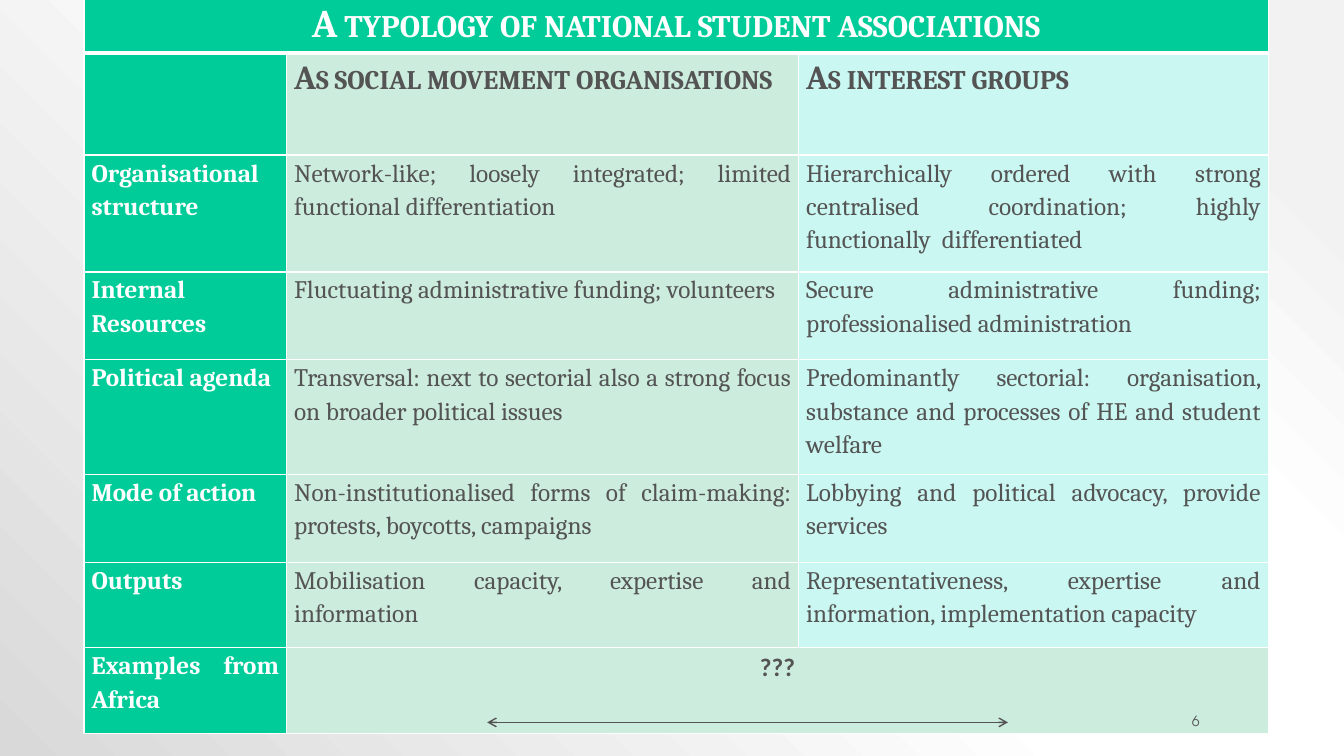
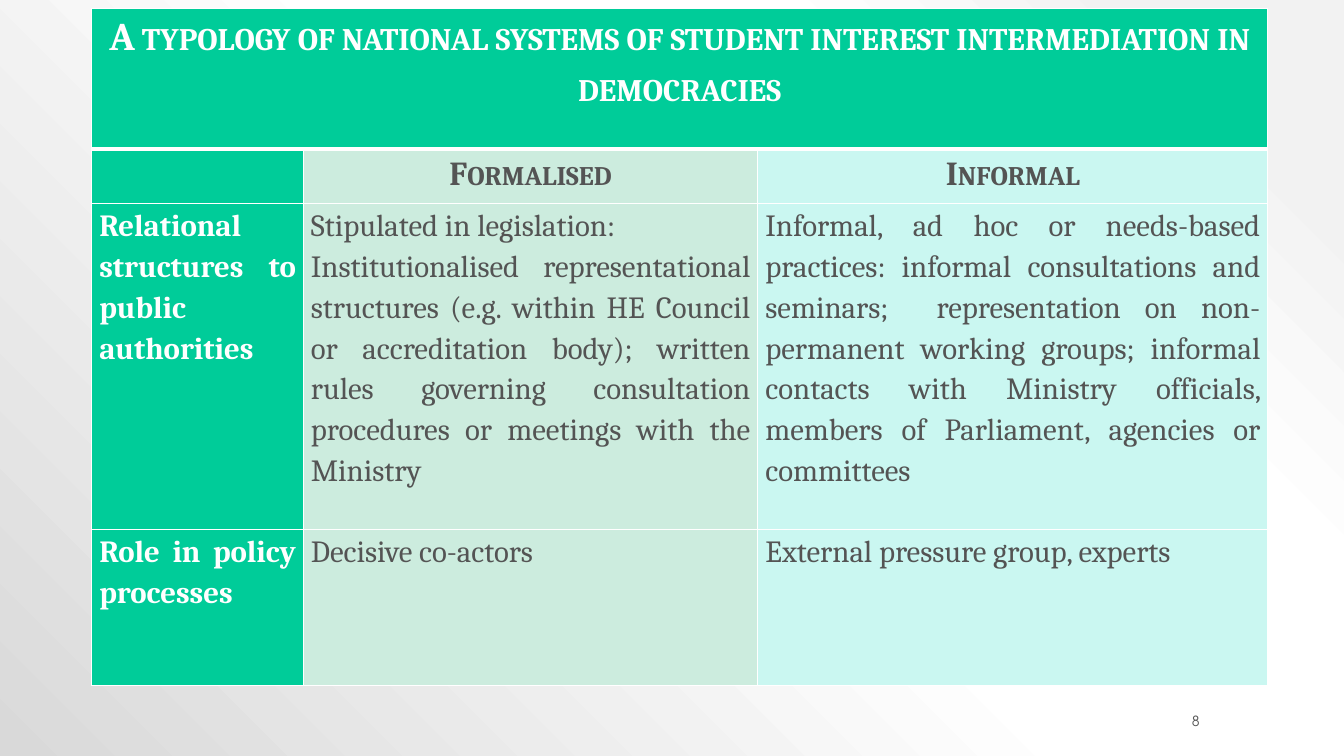
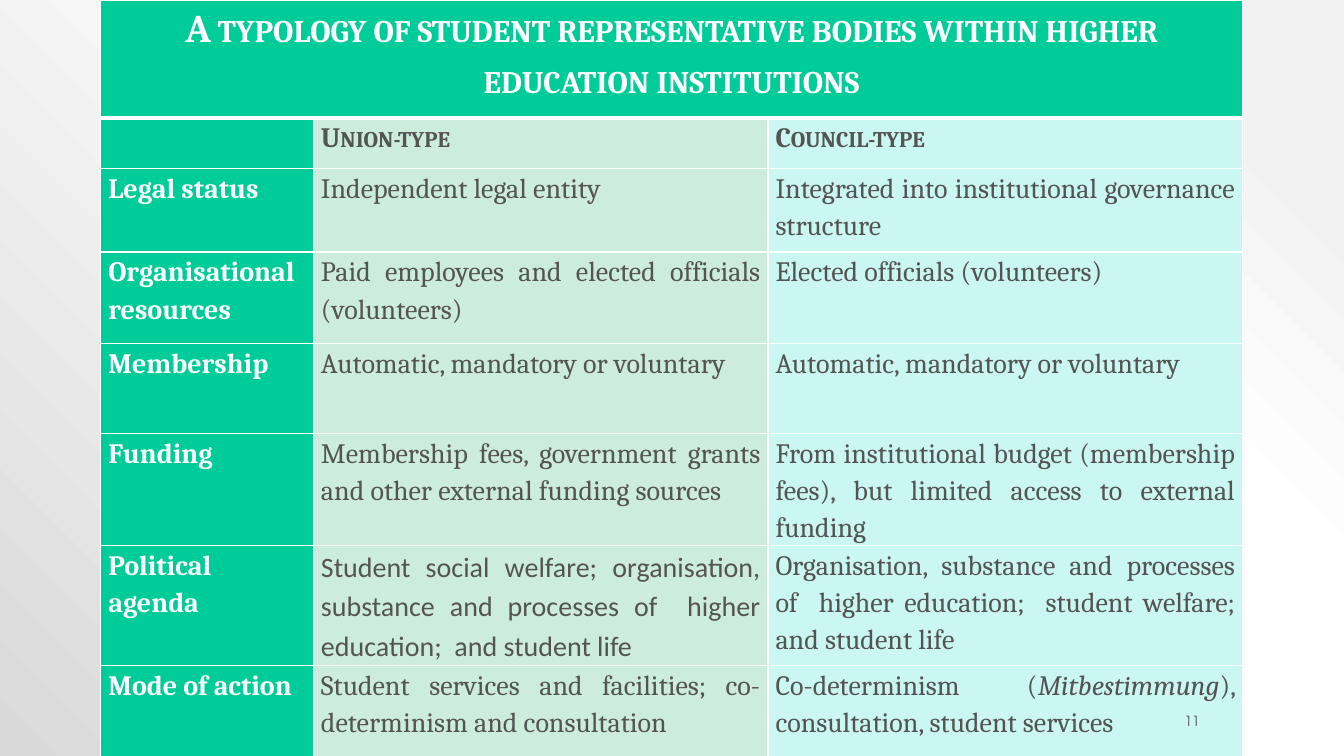
from pptx import Presentation
from pptx import util as u
from pptx.dml.color import RGBColor
from pptx.enum import shapes, text
from pptx.oxml import parse_xml
from pptx.oxml.ns import nsdecls, qn

Pt = u.Pt
COLOURS = {"green": "00CC99", "mint": "CCECDE", "aqua": "CAF7F1",
           "white": "FFFFFF", "grey": "545454"}
COLUMN_FILLS = ("green", "mint", "aqua")
BACKGROUND_STOPS = ((10, "F2F2F2"), (28, "FFFFFF"), (48, "FFFFFF"), (100, "D9D9D9"))
TITLE_SIZE = 28
CENTRE, JUSTIFY = text.PP_ALIGN.CENTER, text.PP_ALIGN.JUSTIFY

# Asterisks in a cell enclose italic words; "centred" and "calibri" hold (row, column).
TYPOLOGIES = [
    {
        "number": "6", "left": 60, "top": -2.9,
        "widths": (144.7, 365.8, 335.5),
        "heights": (41, 72.7, 83.5, 62.6, 82.1, 62.6, 61.2, 61),
        "heading_size": 24, "body_size": 18,
        "centred": {(7, 1)}, "calibri": {(7, 1)}, "bold": {(7, 1)},
        "wide_rows": [7], "arrow": (348, 516, 720, 516),
        "rows": [
            ("A typology of national student associations",),
            ("", "As social movement organisations", "As interest groups"),
            ("Organisational structure",
             "Network-like; loosely integrated; limited functional differentiation",
             "Hierarchically ordered with strong centralised coordination; "
             "highly functionally  differentiated"),
            ("Internal Resources",
             "Fluctuating administrative funding; volunteers",
             "Secure administrative funding; professionalised administration"),
            ("Political agenda",
             "Transversal: next to sectorial also a strong focus on broader political issues",
             "Predominantly sectorial: organisation, substance and processes of HE "
             "and student welfare"),
            ("Mode of action",
             "Non-institutionalised forms of claim-making: protests, boycotts, campaigns",
             "Lobbying and political advocacy, provide services"),
            ("Outputs",
             "Mobilisation capacity, expertise and information",
             "Representativeness, expertise and information, implementation capacity"),
            ("Examples from Africa", "???"),
        ],
    },
    {
        "number": "8", "left": 65.5, "top": 5.8,
        "widths": (151.2, 324.7, 364.3),
        "heights": (100.8, 38.9, 232.5, 111.6),
        "heading_size": 24, "body_size": 22,
        "centred": {(1, 1), (1, 2)},
        "rows": [
            ("A typology of national systems of student interest intermediation "
             "in democracies",),
            ("", "Formalised", "Informal"),
            ("Relational structures to public authorities",
             "Stipulated in legislation:\n"
             "Institutionalised representational structures (e.g. within HE Council or "
             "accreditation body); written rules governing consultation procedures or "
             "meetings with the Ministry",
             "Informal, ad hoc or needs-based practices: informal consultations and "
             "seminars;  representation on non-permanent working groups; informal "
             "contacts with Ministry officials, members of Parliament, agencies or "
             "committees"),
            ("Role in policy processes", "Decisive co-actors",
             "External pressure group, experts"),
        ],
    },
    {
        "number": "11", "left": 72, "top": 0,
        "widths": (151.9, 324.7, 339.1),
        "heights": (84.2, 36, 59.8, 65.5, 64.3, 80, 85.7, 65.5),
        "heading_size": 20, "body_size": 20,
        "calibri": {(6, 1)},
        "rows": [
            ("A typology of student representative bodies within higher education "
             "institutions",),
            ("", "Union-type", "Council-type"),
            ("Legal status", "Independent legal entity",
             "Integrated into institutional governance structure"),
            ("Organisational resources",
             "Paid employees and elected officials (volunteers)",
             "Elected officials (volunteers)"),
            ("Membership", "Automatic, mandatory or voluntary",
             "Automatic, mandatory or voluntary"),
            ("Funding",
             "Membership fees, government grants and other external funding sources",
             "From institutional budget (membership fees), but limited access to "
             "external funding"),
            ("Political agenda",
             "Student social welfare; organisation, substance and processes of  higher "
             "education;  and student life",
             "Organisation, substance and processes of  higher education;  student "
             "welfare; and student life"),
            ("Mode of action",
             "Student services and facilities; co-determinism and consultation",
             "Co-determinism (*Mitbestimmung*), consultation, student services"),
        ],
    },
]


def write_paragraph(paragraph, content, colour, alignment, small_caps=False, **font):
    paragraph.alignment = alignment
    for index, part in enumerate(content.split("*")):
        run = paragraph.add_run()
        run.text = part
        run.font.color.rgb = RGBColor.from_string(COLOURS[colour])
        for name, value in font.items():
            setattr(run.font, name, value)
        if index % 2:
            run.font.italic = True
        if small_caps:
            run.font._element.set("cap", "small")


def style_cell(cell, row, colour):
    """Give the cell its fill, margins and white borders, thick below the title row."""
    properties = cell._tc.get_or_add_tcPr()
    for side in "LRTB":
        thick = (row, side) in ((0, "B"), (1, "T"))
        properties.append(parse_xml(
            f'<a:ln{side} {nsdecls("a")} w="{Pt(3 if thick else 1)}"><a:solidFill>'
            f'<a:srgbClr val="{COLOURS["white"]}"/></a:solidFill></a:ln{side}>'))
    cell.fill.solid()
    cell.fill.fore_color.rgb = RGBColor.from_string(COLOURS[colour])
    cell.margin_left = cell.margin_right = Pt(5.4)
    cell.margin_top = cell.margin_bottom = 0


presentation = Presentation()
presentation.slide_width, presentation.slide_height = Pt(960), Pt(540)

master = presentation.slide_master
master.background.fill.solid()
background = master.element.find(".//" + qn("p:bgPr"))
stops = "".join(f'<a:gs pos="{position * 1000}"><a:srgbClr val="{colour}"/></a:gs>'
                for position, colour in BACKGROUND_STOPS)
background.replace(background[0], parse_xml(
    f'<a:gradFill {nsdecls("a")} rotWithShape="1"><a:gsLst>{stops}</a:gsLst>'
    '<a:path path="circle"><a:fillToRect l="100000" b="100000"/></a:path></a:gradFill>'))

for typology in TYPOLOGIES:
    slide = presentation.slides.add_slide(presentation.slide_layouts[6])
    widths, heights = typology["widths"], typology["heights"]
    table = slide.shapes.add_table(
        len(heights), len(widths), Pt(typology["left"]), Pt(typology["top"]),
        Pt(sum(widths)), Pt(sum(heights))).table
    table.first_row = table.horz_banding = False
    for column, width in zip(table.columns, widths):
        column.width = Pt(width)
    for table_row, height in zip(table.rows, heights):
        table_row.height = Pt(height)

    for row in range(len(heights)):
        for column, fill in enumerate(COLUMN_FILLS):
            style_cell(table.cell(row, column), row, fill)
    table.cell(0, 0).merge(table.cell(0, 2))
    for row in typology.get("wide_rows", []):
        table.cell(row, 1).merge(table.cell(row, 2))

    for row, contents in enumerate(typology["rows"]):
        size = {0: TITLE_SIZE, 1: typology["heading_size"]}.get(row, typology["body_size"])
        for column, content in enumerate(contents):
            if not content:
                continue
            place = (row, column)
            frame = table.cell(row, column).text_frame
            for index, line in enumerate(content.split("\n")):
                paragraph = frame.add_paragraph() if index else frame.paragraphs[0]
                paragraph.line_spacing = 1.15
                write_paragraph(
                    paragraph, line, "grey" if column else "white",
                    CENTRE if row == 0 or place in typology.get("centred", ()) else JUSTIFY,
                    small_caps=row < 2, size=Pt(size),
                    bold=row < 2 or column == 0 or place in typology.get("bold", ()),
                    name="Calibri" if place in typology.get("calibri", ()) else "Cambria")
            paragraph.space_after = Pt(10)

    number_box = slide.shapes.add_textbox(Pt(774), Pt(507.6), Pt(90), Pt(14.4))
    number_box.text_frame.word_wrap = True
    number_box.text_frame.vertical_anchor = text.MSO_ANCHOR.MIDDLE
    write_paragraph(number_box.text_frame.paragraphs[0], typology["number"], "grey",
                    text.PP_ALIGN.RIGHT, size=Pt(10), name="TeX Gyre Adventor")

    if "arrow" in typology:
        arrow = slide.shapes.add_connector(
            shapes.MSO_CONNECTOR.STRAIGHT, *map(Pt, typology["arrow"]))
        arrow.line.width = Pt(1)
        arrow.line.color.rgb = RGBColor.from_string(COLOURS["grey"])
        line = arrow.line._get_or_add_ln()
        for end in ("headEnd", "tailEnd"):
            line.append(parse_xml(f'<a:{end} {nsdecls("a")} type="arrow"/>'))
        line.getparent().append(parse_xml(f'<a:effectLst {nsdecls("a")}/>'))

presentation.save("out.pptx")
